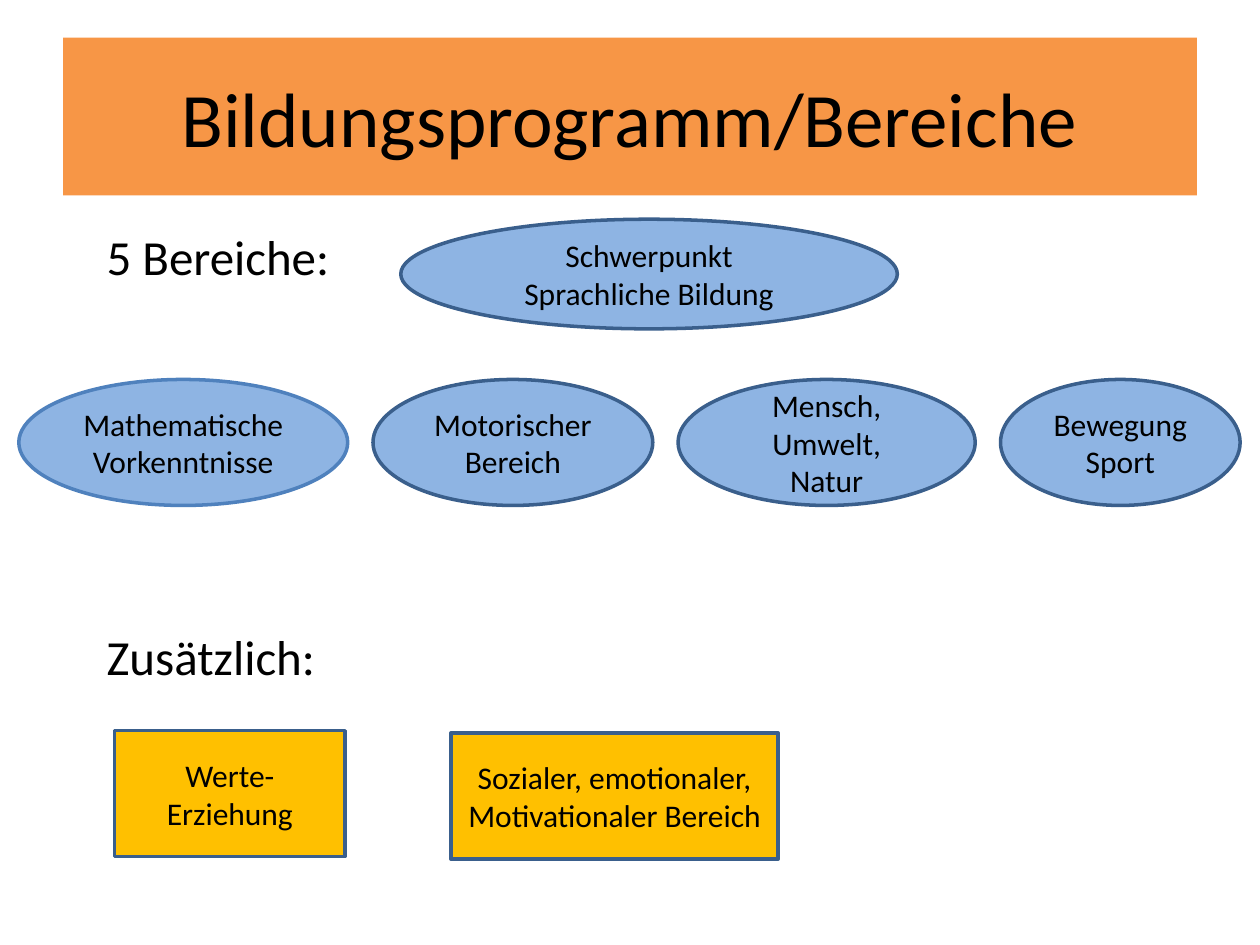
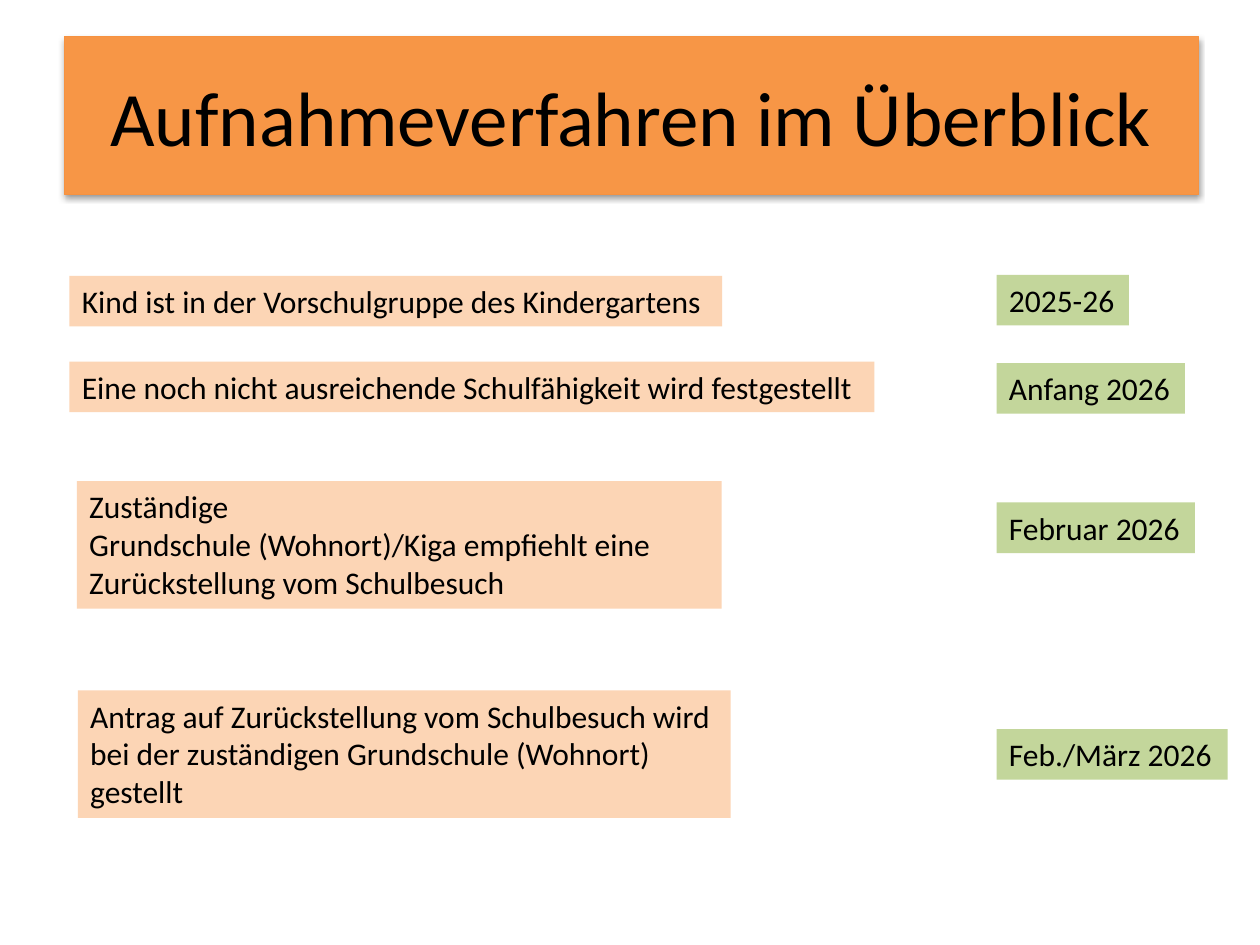
from lxml import etree
from pptx import Presentation
from pptx import util as u
from pptx.dml.color import RGBColor
from pptx.enum import shapes, text
from pptx.oxml.ns import qn

FONT = "Calibri"
BLACK, ORANGE, ORANGE_EDGE = "000000", "F79646", "F69240"
BLUE, BLUE_EDGE, BLUE_EDGE_LIGHT = "8EB4E3", "3A5F8C", "4F81BD"
GOLD, PEACH, GREEN = "FFC000", "FCD5B5", "C3D69B"
RECT, OVAL = shapes.MSO_SHAPE.RECTANGLE, shapes.MSO_SHAPE.OVAL
LINE_H = 1.02      # height of a one-line box, cm
THREE_LINES_H = 2.57


def rgb(value):
    return RGBColor.from_string(value)


def write(sp, content, size, align, anchor):
    """Fill a shape with text; each line of the content is a paragraph."""
    tf = sp.text_frame
    tf.word_wrap = True
    tf.vertical_anchor = anchor
    for i, line in enumerate(content.split("\n")):
        p = tf.paragraphs[0] if i == 0 else tf.add_paragraph()
        p.alignment = align
        r = p.add_run()
        r.text = line
        r.font.name = FONT
        r.font.size = u.Pt(size)
        r.font.color.rgb = rgb(BLACK)


def write_centred(sp, content, size=18):
    write(sp, content, size, text.PP_ALIGN.CENTER, text.MSO_ANCHOR.MIDDLE)


def write_left(sp, content, size=18):
    write(sp, content, size, text.PP_ALIGN.LEFT, text.MSO_ANCHOR.TOP)


def new_slide(prs, title, left, top):
    """Slide with the orange title band."""
    s = prs.slides.add_slide(prs.slide_layouts[5])
    sp = s.shapes.title
    sp.left, sp.top = u.Cm(left), u.Cm(top)
    sp.width, sp.height = u.Cm(22.86), u.Cm(3.18)
    sp.fill.solid()
    sp.fill.fore_color.rgb = rgb(ORANGE)
    write_centred(sp, title, 44)
    return s


def raise_band(sp):
    """Give the title band a thin edge and a soft shadow below."""
    sp.line.color.rgb = rgb(ORANGE_EDGE)
    sp.line.width = u.Pt(0.75)
    effects = etree.SubElement(sp._element.spPr, qn("a:effectLst"))
    shadow = etree.SubElement(effects, qn("a:outerShdw"), blurRad="40000",
                              dist="20000", dir="5400000", rotWithShape="0")
    color = etree.SubElement(shadow, qn("a:srgbClr"), val=BLACK)
    etree.SubElement(color, qn("a:alpha"), val="38000")


def add_box(s, kind, left, top, width, height, fill, edge=None):
    sp = s.shapes.add_shape(kind, u.Cm(left), u.Cm(top), u.Cm(width), u.Cm(height))
    sp.shadow.inherit = False
    sp.fill.solid()
    sp.fill.fore_color.rgb = rgb(fill)
    if edge:
        sp.line.color.rgb = rgb(edge)
        sp.line.width = u.Pt(2)
    else:
        sp.line.fill.background()
    return sp


def add_label(s, content, top):
    sp = s.shapes.add_textbox(u.Cm(1.9), u.Cm(top), u.Cm(5.2), u.Cm(1.45))
    write_left(sp, content, 28)


def areas_slide(prs):
    s = new_slide(prs, "Bildungsprogramm/Bereiche", 1.27, 0.76)

    # Main focus and the four other areas
    add_label(s, "5 Bereiche:", 4.45)
    focus = add_box(s, OVAL, 8.08, 4.42, 10.01, 2.21, BLUE, BLUE_EDGE)
    write_centred(focus, "Schwerpunkt\nSprachliche Bildung")
    areas = [
        ("Mathematische\nVorkenntnisse", 6.63, BLUE_EDGE_LIGHT),
        ("Motorischer\nBereich", 5.64, BLUE_EDGE),
        ("Mensch, Umwelt,\nNatur", 5.99, BLUE_EDGE),
        ("Bewegung\nSport", 4.83, BLUE_EDGE),
    ]
    left, gap = 0.38, 0.51
    for content, width, edge in areas:
        write_centred(add_box(s, OVAL, left, 7.65, width, 2.54, BLUE, edge), content)
        left += width + gap

    # Additional areas
    add_label(s, "Zusätzlich:", 12.5)
    extras = [
        ("Werte-\nErziehung", 2.31, 14.73, 4.65),
        ("Sozialer, emotionaler,\nMotivationaler Bereich", 9.09, 14.78, 6.6),
    ]
    for content, left, top, width in extras:
        write_centred(add_box(s, RECT, left, top, width, 2.54, GOLD, BLUE_EDGE), content)


def admission_slide(prs):
    s = new_slide(prs, "Aufnahmeverfahren im Überblick", 1.3, 0.74)
    raise_band(s.shapes.title)

    # Steps: text, left, top, width, height
    steps = [
        ("Kind ist in der Vorschulgruppe des Kindergartens", 1.4, 5.56, 13.16, LINE_H),
        ("Eine noch nicht ausreichende Schulfähigkeit wird festgestellt",
         1.4, 7.29, 16.23, LINE_H),
        ("Zuständige\nGrundschule (Wohnort)/Kiga empfiehlt eine\n"
         "Zurückstellung vom Schulbesuch", 1.55, 9.7, 13, THREE_LINES_H),
        ("Antrag auf Zurückstellung vom Schulbesuch wird\n"
         "bei der zuständigen Grundschule (Wohnort)\ngestellt",
         1.57, 13.92, 13.16, THREE_LINES_H),
    ]
    for content, *place in steps:
        write_left(add_box(s, RECT, *place, PEACH), content)

    # Dates: text, top, width
    dates = [
        ("2025-26", 5.54, 2.67),
        ("Anfang 2026", 7.32, 3.8),
        ("Februar 2026", 10.13, 4),
        ("Feb./März 2026", 14.7, 4.66),
    ]
    for content, top, width in dates:
        write_left(add_box(s, RECT, 20.09, top, width, LINE_H, GREEN), content)


def main():
    prs = Presentation()
    prs.slide_width, prs.slide_height = u.Cm(25.4), u.Cm(19.05)
    areas_slide(prs)
    admission_slide(prs)
    prs.save("out.pptx")


if __name__ == "__main__":
    main()
